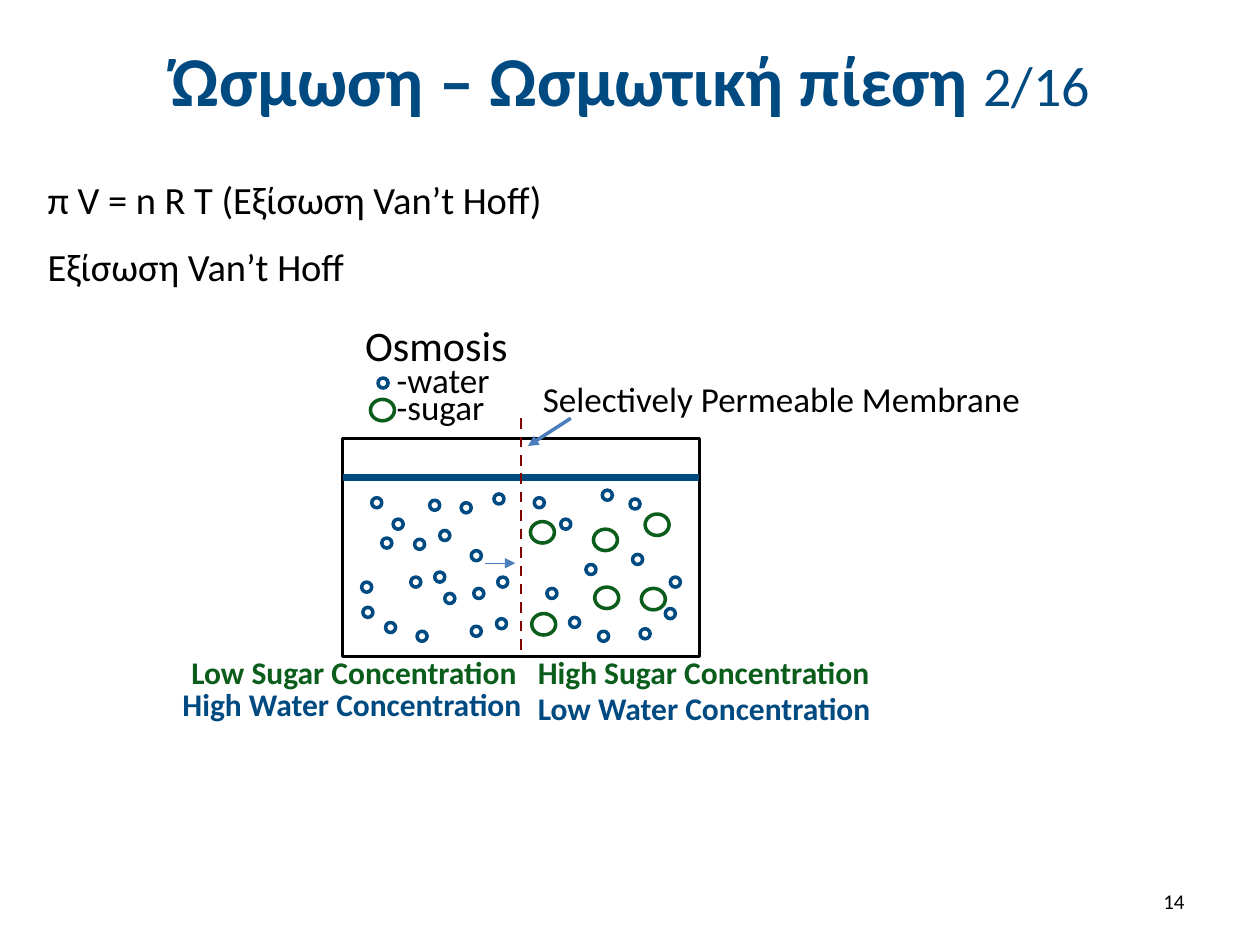
import pptx
import pptx.util
import pptx.dml.color
import pptx.enum.dml
import pptx.enum.shapes
import pptx.enum.text
import pptx.oxml
import pptx.oxml.ns

Inches = pptx.util.Inches
SHAPE = pptx.enum.shapes.MSO_SHAPE
ALIGN = pptx.enum.text.PP_ALIGN
ANCHOR = pptx.enum.text.MSO_ANCHOR

BLUE, GREEN, RED, BLACK, ARROW = "004A82", "0B5D1B", "820000", "000000", "4B7EBC"
WATER_SIZE = (0.08, 0.08)
SUGAR_SIZE = (0.19, 0.17)

# Offsets of the molecules from the top left corner of the tank, in inches
WATER_LOW_SUGAR_SIDE = [
    (0.23, 0.47), (0.40, 0.64), (0.57, 0.80), (0.54, 1.10), (0.73, 1.06),
    (0.81, 1.23), (1.20, 0.44), (0.94, 0.51), (0.69, 0.49), (0.77, 0.73),
    (1.02, 0.89), (0.31, 0.79), (0.15, 1.14), (0.16, 1.34), (0.34, 1.46),
    (0.59, 1.53), (1.04, 1.19), (1.23, 1.10), (1.22, 1.43), (1.02, 1.49),
]
WATER_HIGH_SUGAR_SIDE = [
    (1.73, 0.64), (2.06, 0.41), (2.28, 0.48), (1.52, 0.47), (1.62, 1.19),
    (1.80, 1.42), (1.93, 1.00), (2.30, 0.92), (2.60, 1.10), (2.56, 1.35),
    (2.36, 1.51), (2.03, 1.53),
]
SUGAR = [(1.49, 0.66), (1.99, 0.72), (2.40, 0.60), (2.37, 1.19), (2.00, 1.18), (1.50, 1.39)]


def rgb(color):
    return pptx.dml.color.RGBColor.from_string(color)


def add_run(paragraph, text, size, color, bold=False):
    run = paragraph.add_run()
    run.text = text
    run.font.name = "Calibri"
    run.font.size = pptx.util.Pt(size)
    run.font.bold = bold
    run.font.color.rgb = rgb(color)


def add_text(shapes, box, lines, size, color=BLACK, bold=False, align=ALIGN.LEFT,
             anchor=ANCHOR.TOP, gap=0):
    frame = shapes.add_textbox(*map(Inches, box)).text_frame
    frame.word_wrap = True
    frame.vertical_anchor = anchor
    for index, line in enumerate(lines):
        paragraph = frame.add_paragraph() if index else frame.paragraphs[0]
        paragraph.alignment = align
        if index:
            paragraph.space_before = pptx.util.Pt(gap)
        add_run(paragraph, line, size, color, bold)


def add_outline(shapes, kind, box, color, width):
    outline = shapes.add_shape(kind, *map(Inches, box))
    outline.shadow.inherit = False
    outline.fill.background()
    outline.line.color.rgb = rgb(color)
    outline.line.width = pptx.util.Pt(width)
    return outline


def add_line(shapes, start, end, color, width, arrow=False):
    line = shapes.add_connector(pptx.enum.shapes.MSO_CONNECTOR.STRAIGHT,
                                *map(Inches, (*start, *end)))
    line.line.color.rgb = rgb(color)
    line.line.width = pptx.util.Pt(width)
    properties = line._element.spPr
    if arrow:
        head = pptx.oxml.parse_xml(
            f'<a:tailEnd {pptx.oxml.ns.nsdecls("a")} type="triangle"/>')
        line.line._get_or_add_ln().append(head)
    properties.append(pptx.oxml.parse_xml(f'<a:effectLst {pptx.oxml.ns.nsdecls("a")}/>'))
    return line


def add_water(shapes, x, y):
    add_outline(shapes, SHAPE.OVAL, (x, y, *WATER_SIZE), BLUE, 2)


def add_sugar(shapes, x, y):
    add_outline(shapes, SHAPE.OVAL, (x, y, *SUGAR_SIZE), GREEN, 2)


def add_title(slide, box):
    title = slide.shapes.title
    title.left, title.top, title.width, title.height = map(Inches, box)
    title.text_frame.vertical_anchor = ANCHOR.MIDDLE
    paragraph = title.text_frame.paragraphs[0]
    paragraph.alignment = ALIGN.CENTER
    add_run(paragraph, "Ώσμωση – Ωσμωτική πίεση ", 40, BLUE, True)
    add_run(paragraph, "2/16", 32, BLUE)


def add_tank(shapes, box):
    left, top, width, height = box
    middle = left + width / 2
    tank = add_outline(shapes, SHAPE.RECTANGLE, box, BLACK, 1.5)
    add_line(shapes, (left, top + 0.31), (left + width, top + 0.31), BLUE, 4)
    membrane = add_line(shapes, (middle, top - 0.16), (middle, top + height), RED, 1.5)
    membrane.line.dash_style = pptx.enum.dml.MSO_LINE.DASH
    membrane.end_connect(tank, 2)
    for x, y in WATER_LOW_SUGAR_SIDE + WATER_HIGH_SUGAR_SIDE:
        add_water(shapes, left + x, top + y)
    for x, y in SUGAR:
        add_sugar(shapes, left + x, top + y)
    add_line(shapes, (left + 1.13, top + 0.99), (left + 1.37, top + 0.99), ARROW, 0.75, True)


def add_legend(shapes, box):
    left, top, width, height = box
    add_sugar(shapes, left + 0.14, top + 0.68)
    add_water(shapes, left + 0.2, top + 0.51)
    add_text(shapes, (left, top, width, 0.5), ["Osmosis"], 24)
    for name, offset in (("-water", 0.31), ("-sugar", 0.52)):
        add_text(shapes, (left + 0.25, top + offset, 0.96, 0.44), [name], 20)


def add_membrane_label(shapes, box):
    left, top, width, height = box
    add_line(shapes, (left + 0.32, top + 0.37), (left - 0.02, top + 0.59), ARROW, 2, True)
    add_text(shapes, box, ["Selectively Permeable Membrane"], 20)


def add_concentrations(shapes, box):
    left, top, width, height = box
    labels = [
        (0.07, 0, "Low Sugar Concentration", GREEN),
        (0, 0.26, "High Water Concentration", BLUE),
        (2.82, 0, "High Sugar Concentration", GREEN),
        (2.82, 0.29, "Low Water Concentration", BLUE),
    ]
    for x, y, label, color in labels:
        add_text(shapes, (left + x, top + y, 2.9, 0.4), [label], 18, color, True)


def add_osmosis_diagram(slide, box):
    left, top, width, height = box
    shapes = slide.shapes.add_group_shape().shapes
    add_tank(shapes, (left + 1.37, top + 0.99, 2.83, 1.73))
    add_legend(shapes, (left + 1.45, top, 1.38, 0.96))
    add_membrane_label(shapes, (left + 2.86, top + 0.46, 4.12, 0.44))
    add_concentrations(shapes, (left, top + 2.64, 5.72, 0.69))


def main():
    presentation = pptx.Presentation()
    presentation.slide_width, presentation.slide_height = Inches(10), Inches(7.5)
    slide = presentation.slides.add_slide(presentation.slide_layouts[5])
    add_title(slide, (0.51, 0.13, 9, 0.99))
    add_text(slide.shapes, (7.17, 6.95, 2.33, 0.4), ["14"], 12,
             align=ALIGN.RIGHT, anchor=ANCHOR.MIDDLE)
    add_osmosis_diagram(slide, (1.35, 2.49, 6.98, 3.33))
    add_text(slide.shapes, (0.28, 1.35, 4.18, 1.08),
             ["π V = n R T (Εξίσωση Van’t Hoff)", "Εξίσωση Van’t Hoff"], 22, gap=12)
    presentation.save("out.pptx")


if __name__ == "__main__":
    main()
